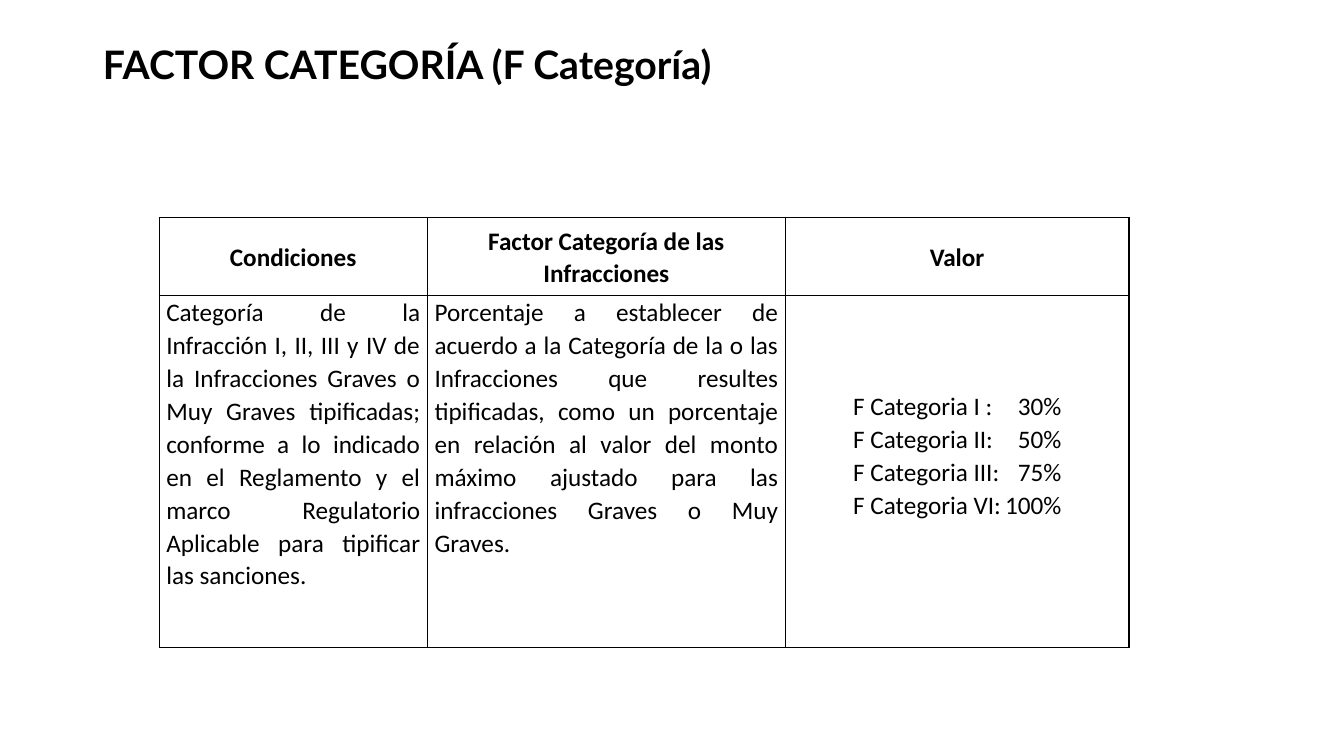
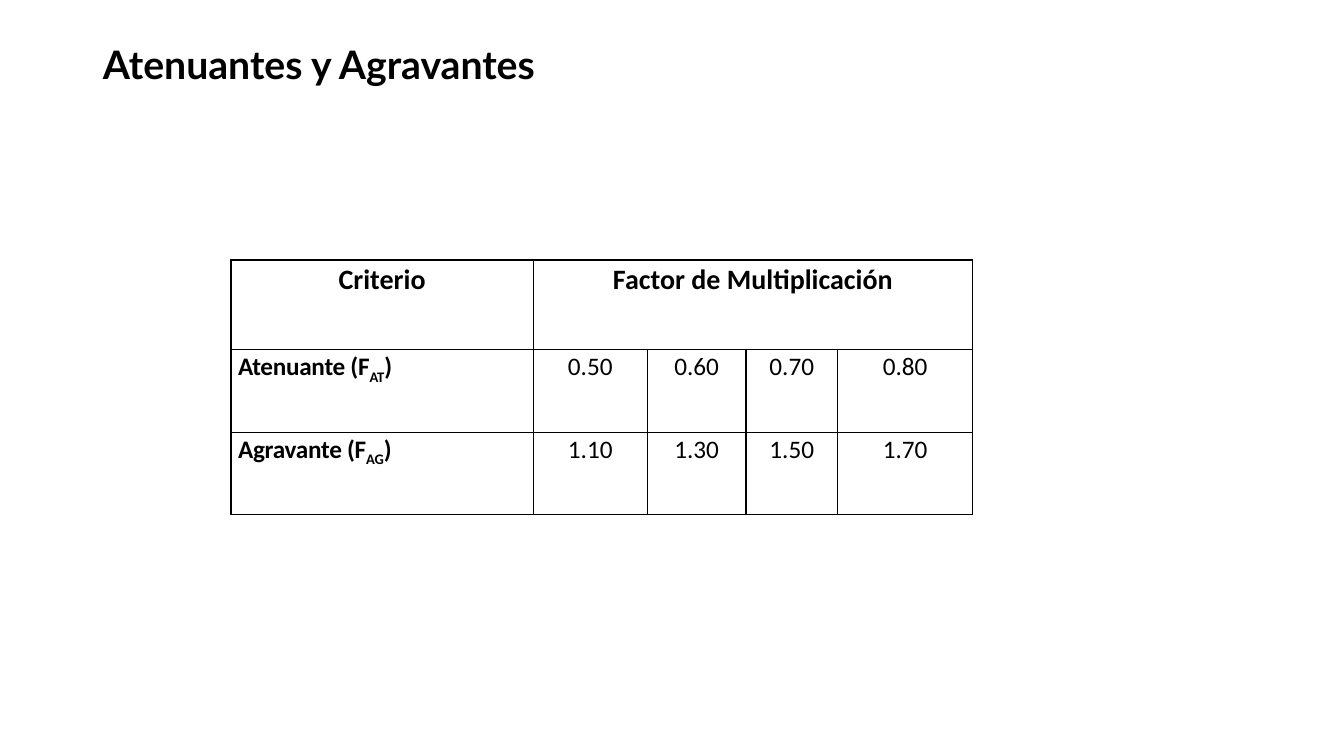
from dataclasses import dataclass
from typing import Optional

from lxml.etree import SubElement
from pptx import Presentation
from pptx.dml.color import RGBColor
from pptx.enum.text import MSO_ANCHOR, PP_ALIGN
from pptx.oxml.ns import qn
from pptx.slide import Slide
from pptx.table import _Cell
from pptx.text.text import Font, _Paragraph
from pptx.util import Cm, Length, Pt


# Shared look
@dataclass(frozen=True)
class Theme:
    ink: RGBColor = RGBColor(0x00, 0x00, 0x00)
    title_font: str = "Lato"
    body_font: str = "Calibri"
    title_size: Length = Pt(28)
    large_size: Length = Pt(20)
    body_size: Length = Pt(18)
    title_spacing: float = 0.9
    body_spacing: float = 1.07
    border: Length = Pt(1)
    side_margin: Length = Cm(0.18)


THEME = Theme()


# Content model
@dataclass(frozen=True)
class Entry:
    lines: tuple[str, ...]
    bold: bool = False
    size: Length = THEME.body_size
    align: PP_ALIGN = PP_ALIGN.CENTER
    anchor: MSO_ANCHOR = MSO_ANCHOR.TOP
    subscript: str = ""
    left_margin: Length = THEME.side_margin
    bottom_margin: Length = Cm(0)
    tab: Optional[Length] = None
    columns: int = 1


@dataclass(frozen=True)
class FactorTable:
    title: str
    left: float
    top: float
    widths: tuple[float, ...]
    heights: tuple[float, ...]
    rows: tuple[tuple[Entry, ...], ...]


def condition_heading(text: str) -> Entry:
    return Entry((text,), bold=True, anchor=MSO_ANCHOR.MIDDLE)


def criterion_heading(text: str, columns: int = 1) -> Entry:
    return Entry((text,), bold=True, size=THEME.large_size, columns=columns)


def description(text: str) -> Entry:
    return Entry((text,), align=PP_ALIGN.JUSTIFY)


def criterion_row(name: str, subscript: str, *factors: str) -> tuple[Entry, ...]:
    label = Entry((f"{name} (F",), bold=True, align=PP_ALIGN.JUSTIFY, subscript=subscript)
    return (label, *(Entry((factor,)) for factor in factors))


CATEGORY = FactorTable(
    title="FACTOR CATEGORÍA (F Categoría)",
    left=4.01, top=5.49,
    widths=(6.76, 9.02, 8.66),
    heights=(1.96, 8.86),
    rows=(
        (
            condition_heading("Condiciones"),
            condition_heading("Factor Categoría de las Infracciones"),
            condition_heading("Valor"),
        ),
        (
            description(
                "Categoría de la Infracción I, II, III y IV de la Infracciones Graves o Muy Graves "
                "tipificadas; conforme a lo indicado en el Reglamento y el marco Regulatorio "
                "Aplicable para tipificar las sanciones."
            ),
            description(
                "Porcentaje a establecer de acuerdo a la Categoría de la o las Infracciones que "
                "resultes tipificadas, como un porcentaje en relación al valor del monto máximo "
                "ajustado para las infracciones Graves o Muy Graves."
            ),
            Entry(
                (
                    "F Categoria I :\t30%",
                    "F Categoria II:\t50%",
                    "F Categoria III:\t75%",
                    "F Categoria VI:\t100%",
                ),
                align=PP_ALIGN.LEFT,
                anchor=MSO_ANCHOR.MIDDLE,
                left_margin=Cm(1.71),
                bottom_margin=Cm(0.83),
                tab=Cm(5.25),
            ),
        ),
    ),
)

CRITERIA = FactorTable(
    title="Atenuantes y Agravantes",
    left=5.82, top=6.55,
    widths=(7.62, 2.87, 2.49, 2.31, 3.4),
    heights=(2.26, 2.08, 2.08),
    rows=(
        (criterion_heading("Criterio"), criterion_heading("Factor de Multiplicación", 4)),
        criterion_row("Atenuante", "AT", "0.50", "0.60", "0.70", "0.80"),
        criterion_row("Agravante", "AG", "1.10", "1.30", "1.50", "1.70"),
    ),
)


# Drawing
def style_font(font: Font, name: str, size: Length, bold: bool) -> None:
    font.name = name
    font.size = size
    font.bold = bold
    font.color.rgb = THEME.ink


def add_title(slide: Slide, text: str) -> None:
    title = slide.shapes.title
    title.left, title.top, title.width, title.height = Cm(2.34), Cm(1.02), Cm(29.21), Cm(3.68)
    title.text_frame.text = text
    title.text_frame.vertical_anchor = MSO_ANCHOR.TOP
    heading = title.text_frame.paragraphs[0]
    heading.alignment = PP_ALIGN.LEFT
    heading.line_spacing = THEME.title_spacing
    style_font(heading.font, THEME.title_font, THEME.title_size, True)


def frame_cell(cell: _Cell) -> None:
    properties = cell._tc.get_or_add_tcPr()
    for side in ("a:lnL", "a:lnR", "a:lnT", "a:lnB"):
        edge = SubElement(properties, qn(side), w=str(THEME.border))
        ink = SubElement(edge, qn("a:solidFill"))
        SubElement(ink, qn("a:srgbClr"), val=str(THEME.ink))
    cell.fill.background()


def add_subscript(paragraph: _Paragraph, subscript: str) -> None:
    paragraph.add_run().text = subscript
    paragraph.add_run().text = ")"
    for run in paragraph.runs:
        run._r.get_or_add_rPr().set("spc", "-20")
    paragraph.runs[1]._r.get_or_add_rPr().set("baseline", "-25000")


def add_right_tab(paragraph: _Paragraph, position: Length) -> None:
    stops = SubElement(paragraph._p.get_or_add_pPr(), qn("a:tabLst"))
    SubElement(stops, qn("a:tab"), pos=str(position), algn="r")


def fill_cell(cell: _Cell, entry: Entry) -> None:
    cell.margin_left, cell.margin_right = entry.left_margin, THEME.side_margin
    cell.margin_top, cell.margin_bottom = Cm(0), entry.bottom_margin
    cell.vertical_anchor = entry.anchor
    cell.text_frame.text = "\n".join(entry.lines)
    for paragraph in cell.text_frame.paragraphs:
        if entry.subscript:
            add_subscript(paragraph, entry.subscript)
        if entry.tab is not None:
            add_right_tab(paragraph, entry.tab)
        paragraph.alignment = entry.align
        paragraph.line_spacing = THEME.body_spacing
        style_font(paragraph.font, THEME.body_font, entry.size, entry.bold)


def add_factor_table(slide: Slide, factors: FactorTable) -> None:
    table = slide.shapes.add_table(
        len(factors.heights), len(factors.widths), Cm(factors.left), Cm(factors.top),
        Cm(sum(factors.widths)), Cm(sum(factors.heights)),
    ).table
    table.first_row = table.horz_banding = False
    for column, width in zip(table.columns, factors.widths):
        column.width = Cm(width)
    for row, height in zip(table.rows, factors.heights):
        row.height = Cm(height)
    for cell in table.iter_cells():
        frame_cell(cell)
    for row_index, entries in enumerate(factors.rows):
        column_index = 0
        for entry in entries:
            cell = table.cell(row_index, column_index)
            column_index += entry.columns
            if entry.columns > 1:
                cell.merge(table.cell(row_index, column_index - 1))
            fill_cell(cell, entry)


def main() -> None:
    deck = Presentation()
    deck.slide_width, deck.slide_height = Cm(33.87), Cm(19.05)
    title_only = deck.slide_layouts[5]
    for factors in (CATEGORY, CRITERIA):
        slide = deck.slides.add_slide(title_only)
        add_title(slide, factors.title)
        add_factor_table(slide, factors)
    deck.save("out.pptx")


if __name__ == "__main__":
    main()
